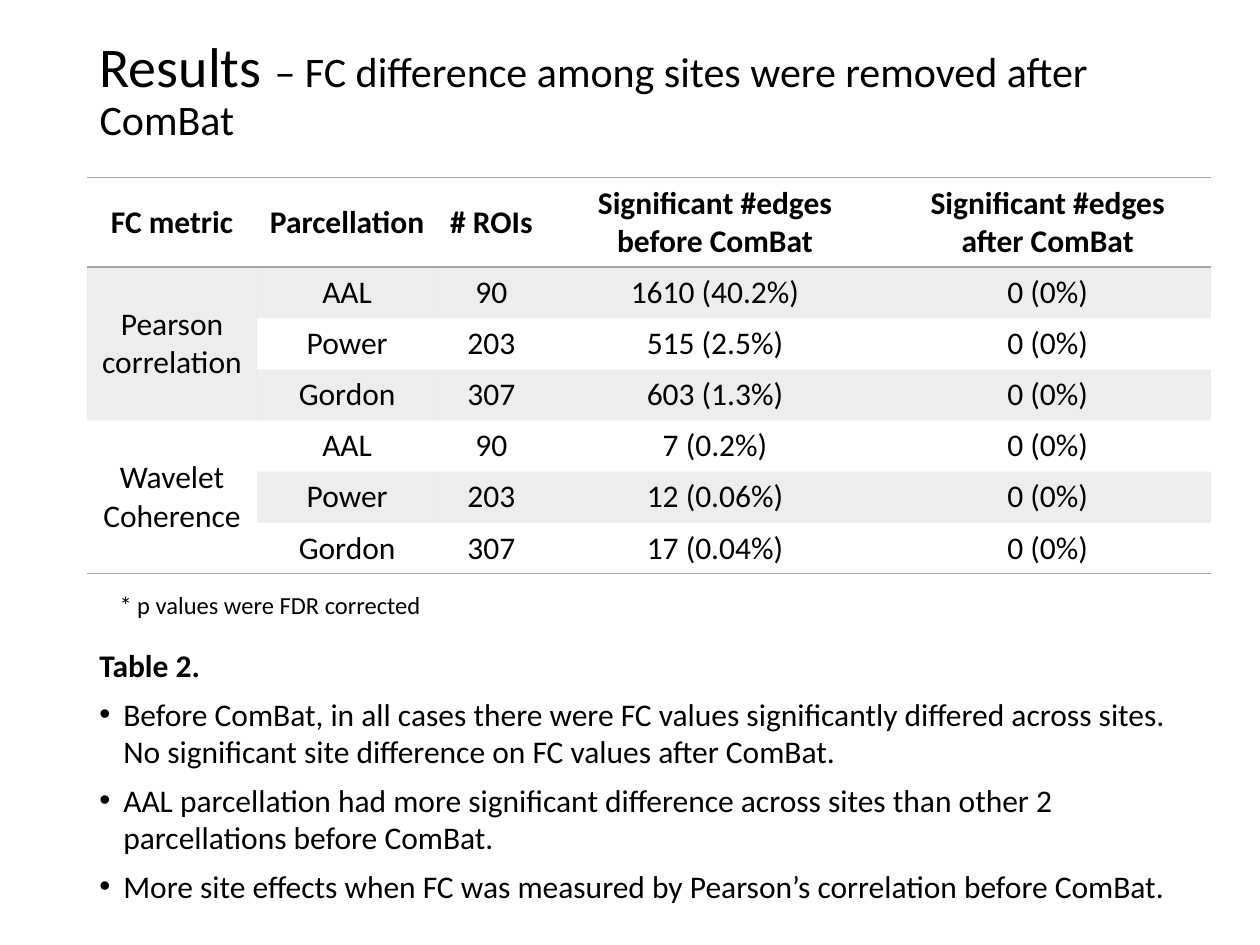
import pptx
import pptx.util
import pptx.dml.color
import pptx.enum.text
import pptx.oxml.ns
import lxml.etree

Inches, Pt = pptx.util.Inches, pptx.util.Pt
Align, Anchor = pptx.enum.text.PP_ALIGN, pptx.enum.text.MSO_ANCHOR
qn = pptx.oxml.ns.qn

TITLE = ("Results ", "– FC difference among sites were removed after ComBat")
HEADERS = ("FC metric", "Parcellation", "# ROIs",
           "Significant #edges before ComBat", "Significant #edges after ComBat")
PARCELLATIONS = (("AAL", "90"), ("Power", "203"), ("Gordon", "307"))
METRICS = (
    ("Pearson correlation", ("1610 (40.2%)", "515 (2.5%)", "603 (1.3%)")),
    ("Wavelet Coherence", ("7 (0.2%)", "12 (0.06%)", "17 (0.04%)")),
)
AFTER_COMBAT = "0 (0%)"
FOOTNOTE = "* p values were FDR corrected"
CAPTION = "Table 2."
FINDINGS = (
    "Before ComBat, in all cases there were FC values significantly differed across sites. "
    "No significant site difference on FC values after ComBat.",
    "AAL parcellation had more significant difference across sites than other 2 "
    "parcellations before ComBat.",
    "More site effects when FC was measured by Pearson’s correlation before ComBat.",
)

THEME = {"font": "Calibri", "text": "000000", "grey": "A5A5A5", "band_alpha": 20,
         "title": 32, "subtitle": 24, "body": 18, "note": 14}
LEFT, WIDTH = 0.69, 8.92
TABLE_TOP, TABLE_HEIGHT, HEADER_HEIGHT = 1.41, 3.13, 0.7
COLUMN_WIDTHS = (1.35, 1.43, 0.86, 2.69, 2.59)
BULLET_INDENT = 0.19
PLAIN_TABLE_STYLE = "{2D5ABB26-0587-4C30-8999-92F81FD0307C}"


def write(paragraph, text, size=THEME["body"], bold=False, align=Align.LEFT,
          before=0, line=None, bullet=False):
    run = paragraph.add_run()
    run.text = text
    run.font.name = THEME["font"]
    run.font.size = Pt(size)
    run.font.bold = bold
    run.font.color.rgb = pptx.dml.color.RGBColor.from_string(THEME["text"])
    paragraph.alignment = align
    paragraph.space_before = Pt(before)
    if line:
        paragraph.line_spacing = line
    if bullet:
        properties = paragraph._p.get_or_add_pPr()
        properties.set("marL", str(Inches(BULLET_INDENT)))
        properties.set("indent", str(-Inches(BULLET_INDENT)))
        lxml.etree.SubElement(properties, qn("a:buFont"), typeface="Arial")
        lxml.etree.SubElement(properties, qn("a:buChar"), char="•")


def add_text_frame(slide, left, top, width, height):
    frame = slide.shapes.add_textbox(*map(Inches, (left, top, width, height))).text_frame
    frame.word_wrap = True
    return frame


def rule_cell(cell, edges):
    properties = cell._tc.get_or_add_tcPr()
    for position, edge in enumerate(edges):
        border = lxml.etree.Element(qn("a:ln" + edge), w=str(Pt(1)))
        fill = lxml.etree.SubElement(border, qn("a:solidFill"))
        lxml.etree.SubElement(fill, qn("a:srgbClr"), val=THEME["grey"])
        properties.insert(position, border)


def shade_cell(cell, shaded):
    if not shaded:
        cell.fill.background()
        return
    cell.fill.solid()
    cell.fill.fore_color.rgb = pptx.dml.color.RGBColor.from_string(THEME["grey"])
    color = cell._tc.tcPr.find(".//" + qn("a:srgbClr"))
    lxml.etree.SubElement(color, qn("a:alpha"), val=str(THEME["band_alpha"] * 1000))


def add_title(slide):
    title = slide.shapes.title
    title.left, title.top, title.width, title.height = map(Inches, (LEFT, 0.4, 9.18, 0.66))
    frame = title.text_frame
    frame.auto_size = pptx.enum.text.MSO_AUTO_SIZE.NONE
    frame.vertical_anchor = Anchor.MIDDLE
    for text, size in zip(TITLE, (THEME["title"], THEME["subtitle"])):
        write(frame.paragraphs[0], text, size=size, line=0.9)


def add_results(slide):
    rows = [HEADERS]
    for metric, edges in METRICS:
        for index, ((parcellation, rois), before) in enumerate(zip(PARCELLATIONS, edges)):
            rows.append((metric if index == 0 else "", parcellation, rois, before, AFTER_COMBAT))
    frame = slide.shapes.add_table(
        len(rows), len(HEADERS), *map(Inches, (LEFT, TABLE_TOP, WIDTH, TABLE_HEIGHT)))
    results = frame.table
    results.first_row = results.horz_banding = False
    results._tbl.tblPr.find(qn("a:tableStyleId")).text = PLAIN_TABLE_STYLE
    for column, width in zip(results.columns, COLUMN_WIDTHS):
        column.width = Inches(width)
    body_height = (TABLE_HEIGHT - HEADER_HEIGHT) / (len(rows) - 1)
    span, last = len(PARCELLATIONS), len(rows) - 1
    for r, values in enumerate(rows):
        results.rows[r].height = Inches(body_height if r else HEADER_HEIGHT)
        for c, text in enumerate(values):
            cell = results.cell(r, c)
            cell.vertical_anchor = Anchor.MIDDLE
            if text:
                write(cell.text_frame.paragraphs[0], text, bold=r == 0, align=Align.CENTER)
            shade_cell(cell, 1 <= r <= span if c == 0 else r % 2 == 1)
            reaches_end = r == last or (c == 0 and r + span > last)
            rule_cell(cell, "TB" if r == 0 else "B" if reaches_end else "")
    for first in range(1, len(rows), span):
        results.cell(first, 0).merge(results.cell(first + span - 1, 0))


def add_notes_below(slide):
    findings = add_text_frame(slide, LEFT, 5.08, WIDTH, 2.17)
    write(findings.paragraphs[0], CAPTION, bold=True, before=6)
    for finding in FINDINGS:
        write(findings.add_paragraph(), finding, before=6, bullet=True)
    footnote = add_text_frame(slide, 0.85, 4.63, 3.48, 0.34)
    write(footnote.paragraphs[0], FOOTNOTE, size=THEME["note"])


def main():
    deck = pptx.Presentation()
    deck.slide_width, deck.slide_height = Inches(10), Inches(7.5)
    slide = deck.slides.add_slide(deck.slide_layouts[5])
    add_title(slide)
    add_results(slide)
    add_notes_below(slide)
    deck.save("out.pptx")


if __name__ == "__main__":
    main()
